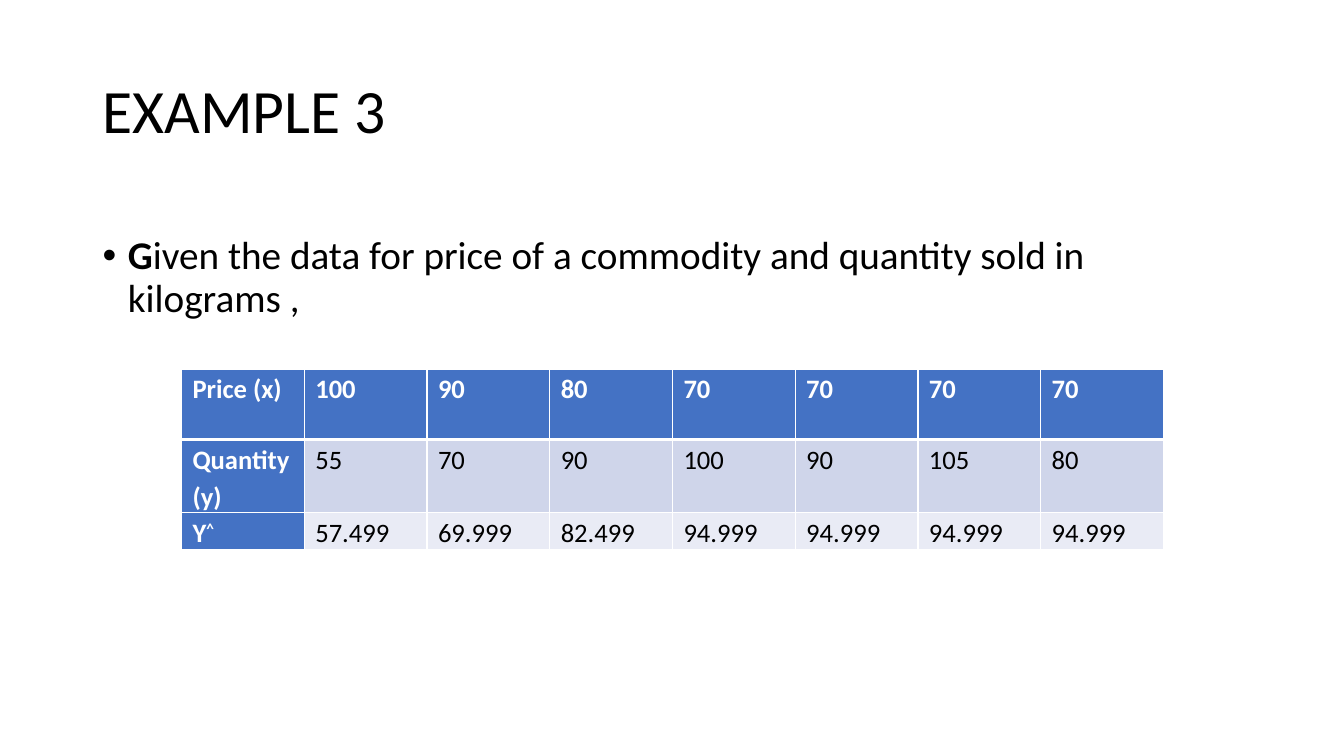
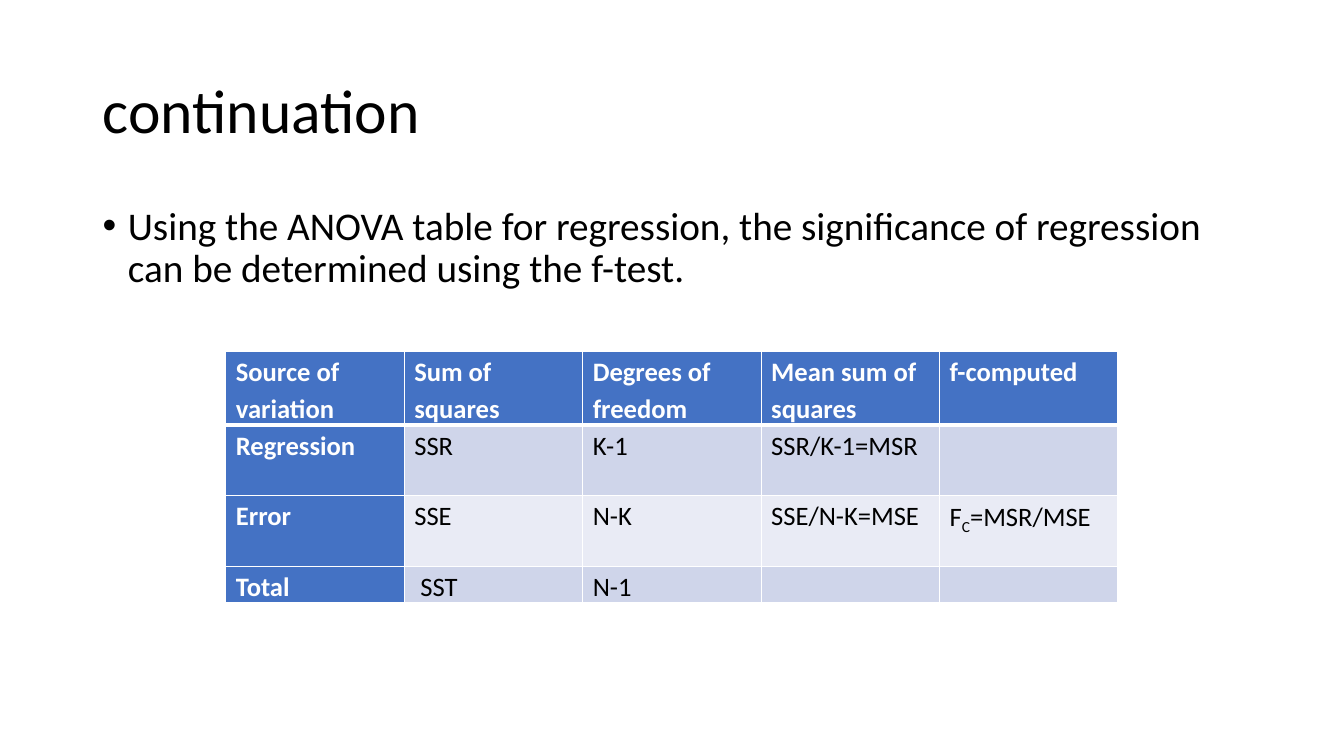
from dataclasses import dataclass

from lxml import etree
from pptx import Presentation
from pptx.dml.color import RGBColor
from pptx.enum import text as t
from pptx.oxml import ns
from pptx.util import Inches, Pt

FONT = "Calibri"
COLORS = {
    "text": "000000",
    "white": "FFFFFF",
    "header": "4472C4",
    "band_dark": "CFD5EA",
    "band_light": "E9EBF5",
}
TITLE_PARAGRAPH = {"line_spacing": 0.9}
BODY_PARAGRAPH = {"line_spacing": 0.9, "space_before": Pt(10)}
LEFT, WIDTH = 0.92, 11.5


@dataclass(frozen=True)
class Run:
    text: str
    bold: bool = False
    baseline: int = 0  # percent: positive raises, negative lowers


@dataclass(frozen=True)
class TableSpec:
    left: float
    top: float
    width: float
    row_heights: tuple[float, ...]
    side_margin: float
    alignment: t.PP_ALIGN
    rows: tuple[tuple[str | tuple[Run, ...], ...], ...]


@dataclass(frozen=True)
class SlideSpec:
    title: str
    body_top: float
    body_height: float
    body: tuple[Run, ...]
    table: TableSpec


SLIDES = (
    SlideSpec(
        "EXAMPLE 3", 2.29, 3.93,
        (Run("G", bold=True),
         Run("iven the data for price of a commodity and quantity sold in kilograms ,")),
        TableSpec(
            1.8, 3.66, 9.74, (0.7, 0.7, 0.34), 0.11, t.PP_ALIGN.JUSTIFY,
            (
                ("Price (x)", "100", "90", "80", "70", "70", "70", "70"),
                ("Quantity(y)", "55", "70", "90", "100", "90", "105", "80"),
                ((Run("Y", bold=True), Run("^", bold=True, baseline=30)),
                 "57.499", "69.999", "82.499", "94.999", "94.999", "94.999", "94.999"),
            ),
        ),
    ),
    SlideSpec(
        "continuation", 2, 4.76,
        (Run("Using the ANOVA table for regression, the significance of regression "
             "can be determined using the f-test."),),
        TableSpec(
            2.24, 3.49, 8.85, (0.7, 0.7, 0.7, 0.34), 0.1, t.PP_ALIGN.LEFT,
            (
                ("Source of variation", "Sum of squares", "Degrees of freedom",
                 "Mean sum of squares", "f-computed"),
                ("Regression", "SSR", "K-1", "SSR/K-1=MSR", ""),
                ("Error", "SSE", "N-K", "SSE/N-K=MSE",
                 (Run("F"), Run("C", baseline=-25), Run("=MSR/MSE"))),
                ("Total", " SST", "N-1", "", ""),
            ),
        ),
    ),
)


def apply_format(target, values: dict) -> None:
    for name, value in values.items():
        setattr(target, name, value)


def add_runs(paragraph, runs: tuple[Run, ...], size: float, color: str) -> None:
    for item in runs:
        run = paragraph.add_run()
        run.text = item.text
        apply_format(run.font, {"name": FONT, "size": Pt(size), "bold": item.bold})
        run.font.color.rgb = RGBColor.from_string(COLORS[color])
        if item.baseline:
            run.font._element.set("baseline", str(item.baseline * 1000))


def add_text(slide, top: float, height: float, runs: tuple[Run, ...], size: float,
             anchor: t.MSO_ANCHOR, paragraph_format: dict):
    """Add a full-width text box and return its paragraph."""
    box = slide.shapes.add_textbox(*map(Inches, (LEFT, top, WIDTH, height)))
    apply_format(box.text_frame, {"word_wrap": True, "vertical_anchor": anchor})
    paragraph = box.text_frame.paragraphs[0]
    apply_format(paragraph, paragraph_format)
    add_runs(paragraph, runs, size, "text")
    return paragraph


def add_bullet(paragraph) -> None:
    properties = paragraph._p.get_or_add_pPr()
    properties.set("marL", str(Inches(0.25)))
    properties.set("indent", str(Inches(-0.25)))
    etree.SubElement(properties, ns.qn("a:buFont"), typeface="Arial")
    etree.SubElement(properties, ns.qn("a:buChar"), char="•")


def add_borders(cell, row: int) -> None:
    """Draw thin white borders, with a thick one below the header row."""
    widths = {"L": 1, "R": 1, "T": 3 if row == 1 else 1, "B": 3 if row == 0 else 1}
    properties = cell._tc.get_or_add_tcPr()
    for side, width in widths.items():
        line = etree.SubElement(properties, ns.qn(f"a:ln{side}"), w=str(Pt(width)))
        fill = etree.SubElement(line, ns.qn("a:solidFill"))
        etree.SubElement(fill, ns.qn("a:srgbClr"), val=COLORS["white"])


def add_table(slide, spec: TableSpec) -> None:
    column_count = len(spec.rows[0])
    frame = slide.shapes.add_table(
        len(spec.rows), column_count,
        *map(Inches, (spec.left, spec.top, spec.width, sum(spec.row_heights))))
    table = frame.table
    apply_format(table, {"first_row": False, "horz_banding": False})
    for column in table.columns:
        column.width = Inches(spec.width / column_count)
    margins = {
        "margin_left": Inches(spec.side_margin), "margin_right": Inches(spec.side_margin),
        "margin_top": 0, "margin_bottom": 0,
    }
    for i, (values, height) in enumerate(zip(spec.rows, spec.row_heights)):
        table.rows[i].height = Inches(height)
        for j, value in enumerate(values):
            cell = table.cell(i, j)
            is_header = i == 0 or j == 0
            band = "band_dark" if i % 2 else "band_light"
            apply_format(cell, margins)
            add_borders(cell, i)
            cell.fill.solid()
            cell.fill.fore_color.rgb = RGBColor.from_string(
                COLORS["header" if is_header else band])
            if value:
                paragraph = cell.text_frame.paragraphs[0]
                apply_format(paragraph, {"alignment": spec.alignment, "line_spacing": 1.15})
                runs = (Run(value, bold=is_header),) if isinstance(value, str) else value
                add_runs(paragraph, runs, 19, "white" if is_header else "text")


def add_slide(presentation, spec: SlideSpec) -> None:
    slide = presentation.slides.add_slide(presentation.slide_layouts[6])
    add_text(slide, 0.4, 1.45, (Run(spec.title),), 44, t.MSO_ANCHOR.MIDDLE, TITLE_PARAGRAPH)
    body = add_text(slide, spec.body_top, spec.body_height, spec.body, 28,
                    t.MSO_ANCHOR.TOP, BODY_PARAGRAPH)
    add_bullet(body)
    add_table(slide, spec.table)


def main() -> None:
    presentation = Presentation()
    apply_format(presentation, {"slide_width": Inches(13.33), "slide_height": Inches(7.5)})
    for spec in SLIDES:
        add_slide(presentation, spec)
    presentation.save("out.pptx")


if __name__ == "__main__":
    main()
